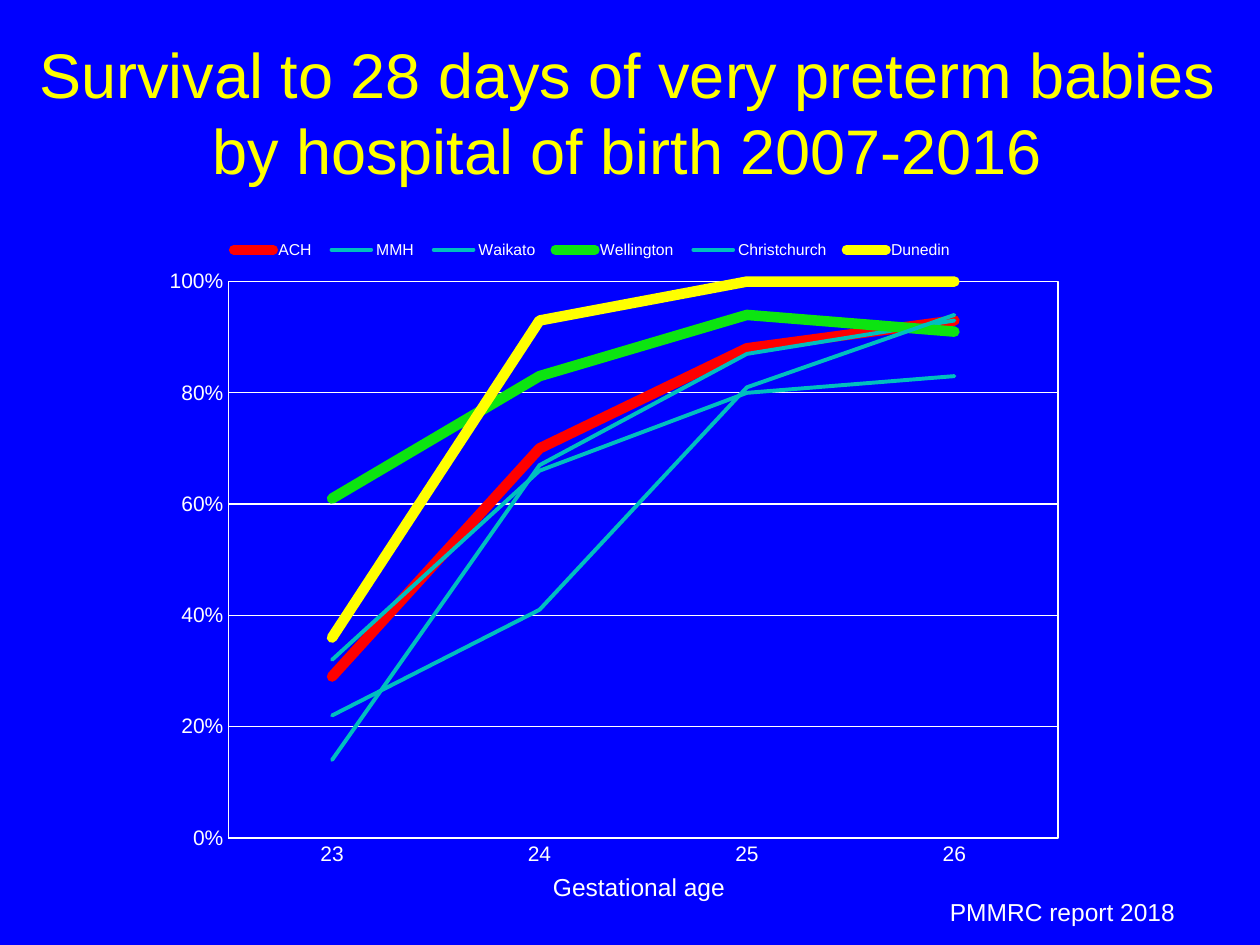
from pptx import Presentation
from pptx.chart.data import CategoryChartData
from pptx.dml.color import RGBColor
from pptx.enum.chart import XL_CHART_TYPE, XL_LEGEND_POSITION, XL_MARKER_STYLE, XL_TICK_MARK
from pptx.enum.text import MSO_ANCHOR, PP_ALIGN
from pptx.oxml import parse_xml
from pptx.oxml.ns import nsdecls
from pptx.util import Inches, Pt

COLORS = {
    "blue": "0000FF", "yellow": "FFFF00", "white": "FFFFFF",
    "red": "FF0000", "teal": "00BFBF", "green": "0CE411",
}


def style(font, size, color="white", name="Arial"):
    font.name = name
    font.size = Pt(size)
    font.bold = False
    font.color.rgb = RGBColor.from_string(COLORS[color])


def set_layout(parent, index, x, y, w, h, target=""):
    for old in parent.xpath("c:layout"):
        parent.remove(old)
    parent.insert(index, parse_xml(
        f'<c:layout {nsdecls("c")}><c:manualLayout>{target}'
        '<c:xMode val="edge"/><c:yMode val="edge"/>'
        f'<c:x val="{x}"/><c:y val="{y}"/><c:w val="{w}"/><c:h val="{h}"/>'
        '</c:manualLayout></c:layout>'))


prs = Presentation()
prs.slide_width, prs.slide_height = Inches(10), Inches(7.5)
s = prs.slides.add_slide(prs.slide_layouts[5])
s.background.fill.solid()
s.background.fill.fore_color.rgb = RGBColor.from_string(COLORS["blue"])

title = s.shapes.title
title.left, title.top = Inches(0), Inches(0.26)
title.width, title.height = Inches(9.96), Inches(1.25)
tf = title.text_frame
tf.vertical_anchor = MSO_ANCHOR.MIDDLE
p = tf.paragraphs[0]
p.alignment = PP_ALIGN.CENTER
r = p.add_run()
r.text = "Survival to 28 days of very preterm babies by hospital of birth 2007-2016"
style(r.font, 36, "yellow")

for text, left, top, width in [
    ("PMMRC report 2018", 7.44, 7.07, 2.21),
    ("Gestational age", 4.29, 6.87, 1.73),
]:
    sp = s.shapes.add_textbox(Inches(left), Inches(top), Inches(width), Inches(0.34))
    sp.text_frame.word_wrap = True
    r = sp.text_frame.paragraphs[0].add_run()
    r.text = text
    style(r.font, 14)

hospitals = [
    ("ACH", (0.29, 0.7, 0.88, 0.93), "red", 6),
    ("MMH", (0.14, 0.67, 0.87, 0.93), "teal", 2.25),
    ("Waikato", (0.32, 0.66, 0.8, 0.83), "teal", 2.25),
    ("Wellington", (0.61, 0.83, 0.94, 0.91), "green", 6),
    ("Christchurch", (0.22, 0.41, 0.81, 0.94), "teal", 2.25),
    ("Dunedin", (0.36, 0.93, 1, 1), "yellow", 6),
]
data = CategoryChartData(number_format="0%")
data.categories = ["23", "24", "25", "26"]
for name, values, color, width in hospitals:
    data.add_series(name, values)
chart = s.shapes.add_chart(XL_CHART_TYPE.LINE, Inches(1.22), Inches(1.62),
                           Inches(7.4), Inches(5.59), data).chart
chart.has_title = False
style(chart.font, 10, name="Times New Roman")

for series, (name, values, color, width) in zip(chart.plots[0].series, hospitals):
    series.smooth = False
    series.marker.style = XL_MARKER_STYLE.NONE
    line = series.format.line
    line.color.rgb = RGBColor.from_string(COLORS[color])
    line.width = Pt(width)
    line._get_or_add_ln().set("cap", "rnd")

cat, val = chart.category_axis, chart.value_axis
for axis in (cat, val):
    axis.major_tick_mark = axis.minor_tick_mark = XL_TICK_MARK.NONE
    style(axis.tick_labels.font, 12)
val.minimum_scale, val.maximum_scale, val.major_unit = 0, 1, 0.2
val.tick_labels.number_format = "0%"
val.tick_labels.number_format_is_linked = False
val.format.line.fill.background()
val.has_major_gridlines = True
for line in (cat.format.line, val.major_gridlines.format.line):
    line.color.rgb = RGBColor.from_string(COLORS["white"])
    line.width = Pt(0.75)

chart.has_legend = True
legend = chart.legend
legend.position = XL_LEGEND_POSITION.BOTTOM
legend.include_in_layout = False
style(legend.font, 9)
set_layout(legend._element, 1, 0.07, 0.04, 0.8, 0.05)

area = chart._chartSpace.chart.plotArea
set_layout(area, 0, 0.08, 0.11, 0.89, 0.79, '<c:layoutTarget val="inner"/>')
area.append(parse_xml(
    f'<c:spPr {nsdecls("c", "a")}><a:noFill/><a:ln w="9525"><a:solidFill>'
    f'<a:srgbClr val="{COLORS["white"]}"/></a:solidFill></a:ln></c:spPr>'))

prs.save("out.pptx")
